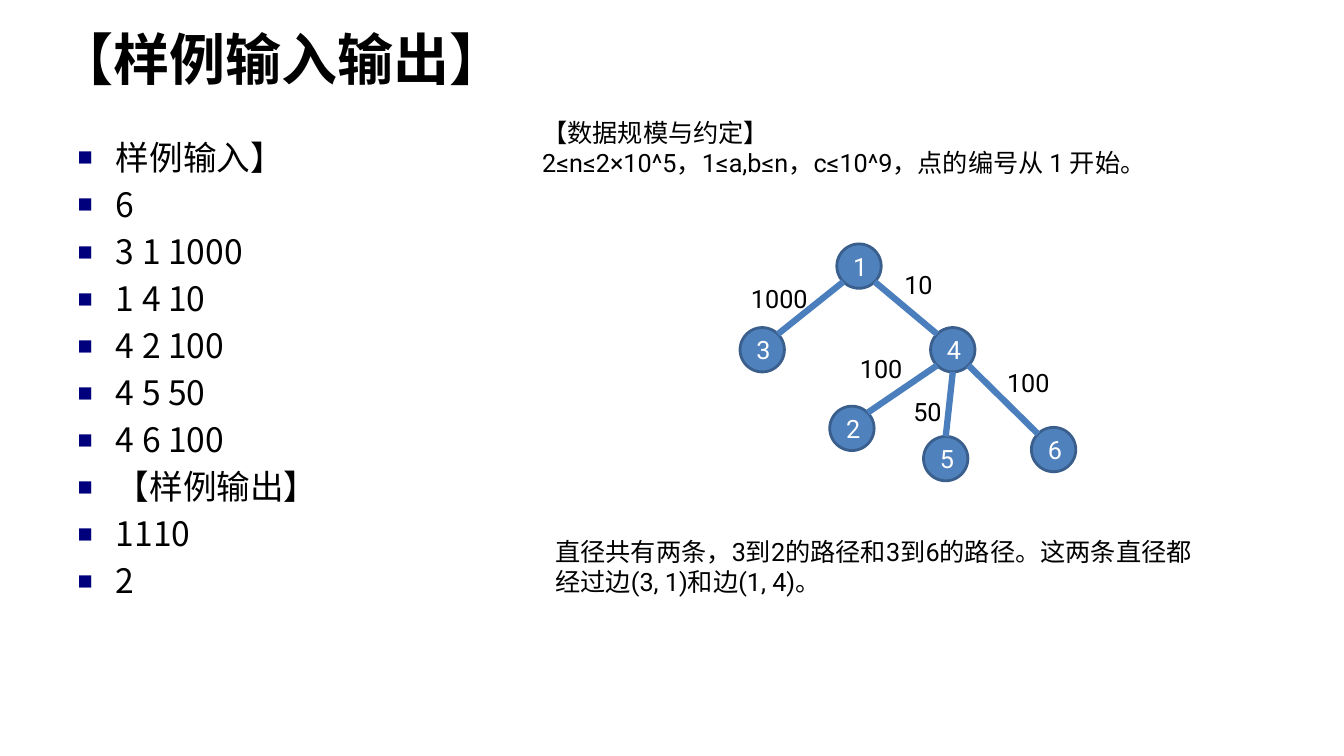
from math import hypot

from lxml import etree
from pptx import Presentation
from pptx.dml.color import RGBColor
from pptx.enum.shapes import MSO_CONNECTOR, MSO_SHAPE
from pptx.enum.text import MSO_ANCHOR, MSO_AUTO_SIZE, PP_ALIGN
from pptx.oxml.ns import qn
from pptx.util import Inches, Pt

OVAL = MSO_SHAPE.OVAL
STRAIGHT = MSO_CONNECTOR.STRAIGHT
LEFT, CENTER = PP_ALIGN.LEFT, PP_ALIGN.CENTER
TOP, MIDDLE = MSO_ANCHOR.TOP, MSO_ANCHOR.MIDDLE
NO_AUTOFIT = MSO_AUTO_SIZE.NONE

COLORS = {"text": "000000", "node": "4F81BD", "outline": "3A5F8C",
          "edge": "4B7EBC", "node_text": "FFFFFF", "bullet": "00007D"}

TITLE = "【样例输入输出】"
SAMPLE = ["样例输入】", "6", "3 1 1000", "1 4 10", "4 2 100", "4 5 50",
          "4 6 100", "【样例输出】", "1110", "2"]
NOTES = [
    (5.28, 1.11, ["【数据规模与约定】",
                  "2≤n≤2×10^5，1≤a,b≤n，c≤10^9，点的编号从 1 开始。"]),
    (5.41, 5.27, ["直径共有两条，3到2的路径和3到6的路径。"
                  "这两条直径都经过边(3, 1)和边(1, 4)。"]),
]
RADIUS = 0.22
NODE_CENTERS = {"1": (8.52, 2.64), "3": (7.56, 3.47), "4": (9.45, 3.47),
                "2": (8.45, 4.25), "5": (9.38, 4.55), "6": (10.45, 4.46)}
# parent, child, horizontal side, weight, label left, top, width
EDGES = [
    ("1", "3", -1, "1000", 7.35, 2.76, 0.88),
    ("1", "4", 1, "10", 8.87, 2.62, 0.51),
    ("4", "2", -1, "100", 8.43, 3.46, 0.79),
    ("4", "5", 0, "50", 8.96, 3.88, 0.51),
    ("4", "6", 1, "100", 9.89, 3.59, 0.79),
]


def rgb(name):
    return RGBColor.from_string(COLORS[name])


def add_bullet(paragraph):
    properties = paragraph._p.get_or_add_pPr()
    properties.set("marL", str(Inches(0.38)))
    properties.set("indent", str(-Inches(0.38)))
    color = etree.SubElement(properties, qn("a:buClr"))
    etree.SubElement(color, qn("a:srgbClr"), val=COLORS["bullet"])
    etree.SubElement(properties, qn("a:buSzPct"), val="75000")
    etree.SubElement(properties, qn("a:buFont"), typeface="Arial")
    etree.SubElement(properties, qn("a:buChar"), char="■")


def write_text(shape, lines, size=18, font="Roboto", color="text", bold=False,
               align=LEFT, anchor=TOP, bullet=False, line_height=None, gap=0):
    frame = shape.text_frame
    frame.word_wrap = True
    frame.auto_size = NO_AUTOFIT
    frame.vertical_anchor = anchor
    for index, line in enumerate(lines):
        paragraph = frame.paragraphs[0] if index == 0 else frame.add_paragraph()
        if bullet:
            add_bullet(paragraph)
        paragraph.alignment = align
        paragraph.space_before = Pt(gap if index else 0)
        if line_height:
            paragraph.line_spacing = Pt(line_height)
        run = paragraph.add_run()
        run.text = line
        run.font.name = font
        run.font.size = Pt(size)
        run.font.bold = bold
        run.font.color.rgb = rgb(color)


def place(shape, left, top, width, height):
    shape.left, shape.top = Inches(left), Inches(top)
    shape.width, shape.height = Inches(width), Inches(height)


def add_label(slide, lines, left, top, width, height):
    box = slide.shapes.add_textbox(Inches(left), Inches(top),
                                   Inches(width), Inches(height))
    write_text(box, lines)


def add_node(slide, name, center):
    x, y = center
    node = slide.shapes.add_shape(OVAL, Inches(x - RADIUS), Inches(y - RADIUS),
                                  Inches(2 * RADIUS), Inches(2 * RADIUS))
    node.shadow.inherit = False
    node.fill.solid()
    node.fill.fore_color.rgb = rgb("node")
    node.line.color.rgb = rgb("outline")
    node.line.width = Pt(2)
    write_text(node, [name], color="node_text", align=CENTER, anchor=MIDDLE)


def add_edge(slide, parent, child, side):
    (x1, y1), (x2, y2) = NODE_CENTERS[parent], NODE_CENTERS[child]
    dx = RADIUS * side / hypot(side, 1)
    dy = RADIUS / hypot(side, 1)
    edge = slide.shapes.add_connector(STRAIGHT, Inches(x1 + dx), Inches(y1 + dy),
                                      Inches(x2 - dx), Inches(y2 - dy))
    edge.line.color.rgb = rgb("edge")
    edge.line.width = Pt(4.5)
    etree.SubElement(edge._element.spPr, qn("a:effectLst"))


def main():
    presentation = Presentation()
    presentation.slide_width = Inches(13.33)
    presentation.slide_height = Inches(7.5)
    slide = presentation.slides.add_slide(presentation.slide_layouts[1])

    title, body = slide.placeholders
    place(title, 0.47, 0.11, 12.4, 0.94)
    write_text(title, [TITLE], size=40, font="Arial", bold=True, anchor=MIDDLE)
    place(body, 0.67, 1.31, 5.22, 5.28)
    write_text(body, SAMPLE, size=24, font="Noto Sans CJK SC", bullet=True,
               line_height=28.8, gap=4.8)

    for left, top, lines in NOTES:
        add_label(slide, lines, left, top, 6.67, 0.71)
    for name, center in NODE_CENTERS.items():
        add_node(slide, name, center)
    for parent, child, side, weight, left, top, width in EDGES:
        add_edge(slide, parent, child, side)
        add_label(slide, [weight], left, top, width, 0.4)

    presentation.save("out.pptx")


if __name__ == "__main__":
    main()
